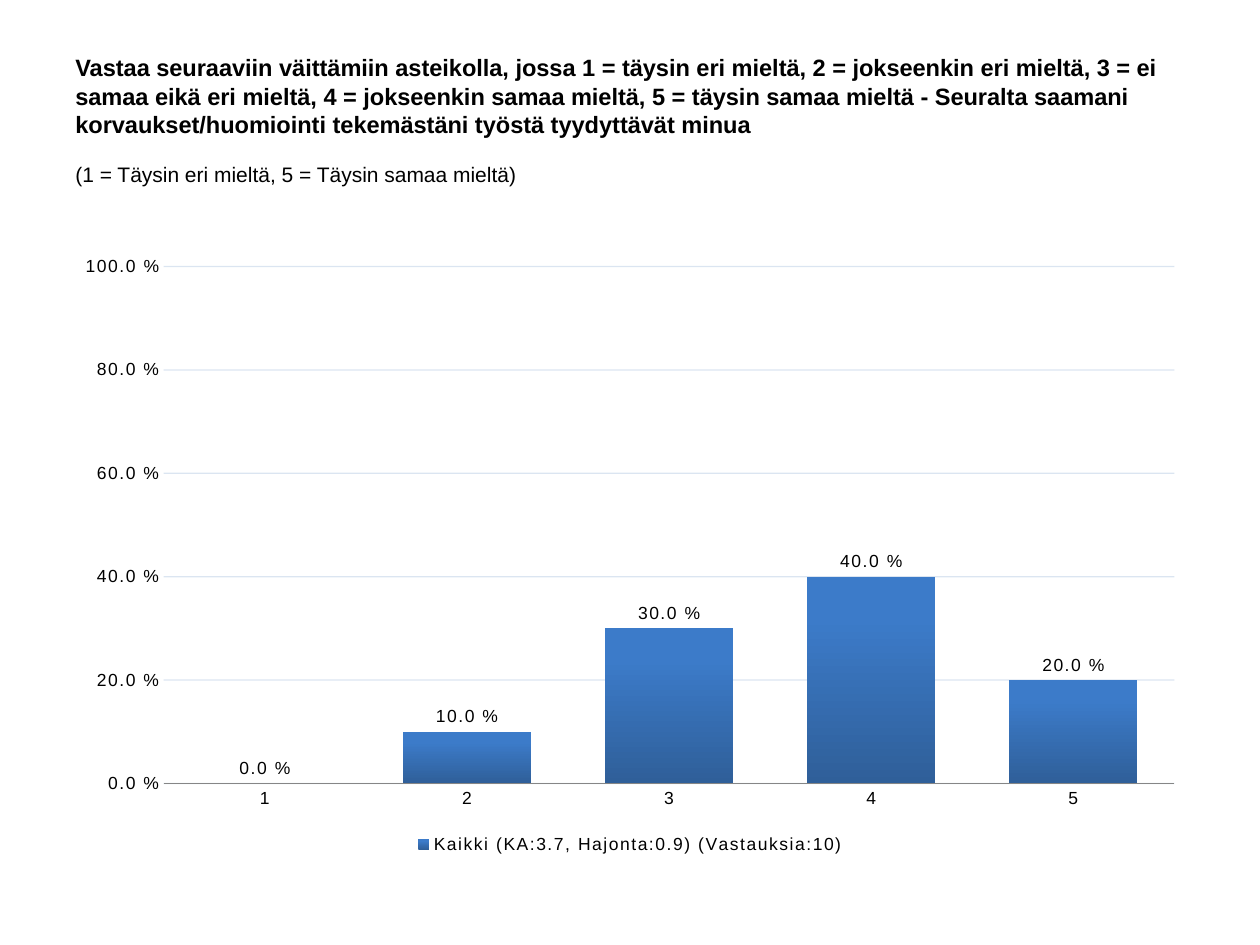
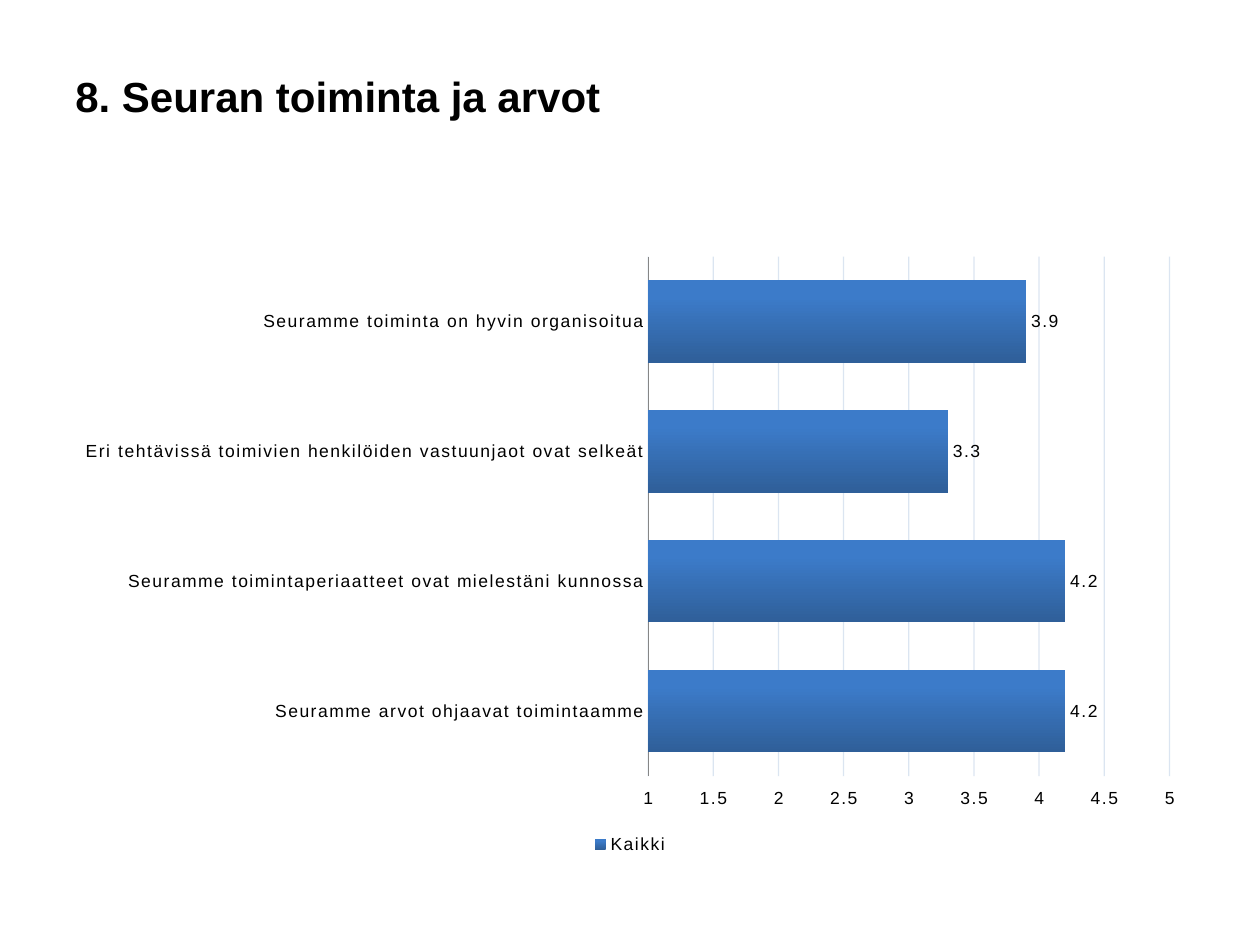
"""Build two survey result slides, each with a heading and a bar chart."""
from dataclasses import dataclass

from lxml import etree
from pptx import Presentation
from pptx.chart.data import CategoryChartData
from pptx.dml.color import RGBColor
from pptx.enum.chart import (XL_CHART_TYPE, XL_LABEL_POSITION, XL_LEGEND_POSITION,
                             XL_TICK_LABEL_POSITION, XL_TICK_MARK)
from pptx.enum.text import MSO_ANCHOR
from pptx.oxml.ns import qn
from pptx.util import Emu, Pt

COLUMN = XL_CHART_TYPE.COLUMN_CLUSTERED
BAR = XL_CHART_TYPE.BAR_CLUSTERED
NO_TICK = XL_TICK_MARK.NONE
LEGEND_BOTTOM = XL_LEGEND_POSITION.BOTTOM
LABEL_OUTSIDE = XL_LABEL_POSITION.OUTSIDE_END
TICKS_HIGH = XL_TICK_LABEL_POSITION.HIGH
TOP, MIDDLE = MSO_ANCHOR.TOP, MSO_ANCHOR.MIDDLE

BLACK = RGBColor(0x00, 0x00, 0x00)
AXIS_GREY = RGBColor(0x86, 0x86, 0x86)
GRID_BLUE = RGBColor(0x4F, 0x81, 0xBD)
BAR_DARK = RGBColor(0x2F, 0x5F, 0x99)
BAR_LIGHT = RGBColor(0x3C, 0x7B, 0xC9)

FONT = "Arial"
PX = 9144
LEFT, WIDTH = 50, 900
PERCENT = "0.0\\ %"


@dataclass(frozen=True)
class Question:
    """One survey question with its answers and value scale."""
    title: str
    title_size: float
    note: str
    kind: XL_CHART_TYPE
    series: str
    answers: dict[str, float]
    low: float
    high: float
    step: float
    number_format: str


QUESTIONS = [
    Question(
        "Vastaa seuraaviin väittämiin asteikolla, jossa 1 = täysin eri mieltä, "
        "2 = jokseenkin eri mieltä, 3 = ei samaa eikä eri mieltä, "
        "4 = jokseenkin samaa mieltä, 5 = täysin samaa mieltä - Seuralta saamani "
        "korvaukset/huomiointi tekemästäni työstä tyydyttävät minua",
        13.5, "(1 = Täysin eri mieltä, 5 = Täysin samaa mieltä)", COLUMN,
        "Kaikki (KA:3.7, Hajonta:0.9) (Vastauksia:10)",
        {"1": 0, "2": 0.1, "3": 0.3, "4": 0.4, "5": 0.2},
        0, 1, 0.2, PERCENT),
    Question(
        "8. Seuran toiminta ja arvot", 24, "", BAR, "Kaikki",
        {"Seuramme toiminta on hyvin organisoitua": 3.9,
         "Eri tehtävissä toimivien henkilöiden vastuunjaot ovat selkeät": 3.3,
         "Seuramme toimintaperiaatteet ovat mielestäni kunnossa": 4.2,
         "Seuramme arvot ohjaavat toimintaamme": 4.2},
        1, 5, 0.5, "General"),
]


def box(top: int, height: int) -> tuple[Emu, Emu, Emu, Emu]:
    """Return the full-width area at the given top and height in px."""
    return Emu(LEFT * PX), Emu(top * PX), Emu(WIDTH * PX), Emu(height * PX)


def set_font(font, size: float, bold: bool = False) -> None:
    """Apply the shared black typeface."""
    font.name, font.size, font.bold = FONT, Pt(size), bold
    font.color.rgb = BLACK


def add_text(s, text: str, top: int, height: int, size: float,
             bold: bool = False, anchor: MSO_ANCHOR = TOP, before: float = 0) -> None:
    """Add a wrapped one-paragraph text box."""
    tf = s.shapes.add_textbox(*box(top, height)).text_frame
    tf.word_wrap = True
    tf.vertical_anchor = anchor
    p = tf.paragraphs[0]
    p.text = text
    p.space_before = Pt(before)
    set_font(p.font, size, bold)


def style_axes(chart, q: Question) -> None:
    """Set the scale, grid and lines of both axes."""
    cat, val = chart.category_axis, chart.value_axis
    for axis in (cat, val):
        axis.major_tick_mark = axis.minor_tick_mark = NO_TICK
    cat.format.line.color.rgb = AXIS_GREY
    cat.format.line.width = Pt(0.75)
    if q.kind == BAR:
        cat.reverse_order = True
        val.tick_label_position = TICKS_HIGH
    val.minimum_scale, val.maximum_scale, val.major_unit = q.low, q.high, q.step
    val.tick_labels.number_format = q.number_format
    val.tick_labels.number_format_is_linked = False
    val.format.line.fill.background()
    grid = val.major_gridlines.format.line
    grid.color.rgb = GRID_BLUE
    grid.width = Pt(0.75)
    for color in chart.element.xpath(".//c:majorGridlines//a:srgbClr"):
        etree.SubElement(color, qn("a:alpha")).set("val", "20000")


def style_bars(plot, q: Question) -> None:
    """Fill the bars with a gradient and label their values."""
    plot.gap_width = 58
    plot.vary_by_categories = False
    fill = plot.series[0].format.fill
    fill.gradient()
    fill.gradient_angle = 90
    for stop, color, position in zip(fill.gradient_stops, (BAR_DARK, BAR_LIGHT), (0, 0.8)):
        stop.color.rgb = color
        stop.position = position
    plot.has_data_labels = True
    labels = plot.data_labels
    labels.show_value = True
    labels.position = LABEL_OUTSIDE
    labels.number_format = q.number_format
    labels.number_format_is_linked = False


def add_survey_chart(s, q: Question) -> None:
    """Add the chart of answers with its legend."""
    data = CategoryChartData(number_format=q.number_format)
    data.categories = list(q.answers)
    data.add_series(q.series, list(q.answers.values()))
    chart = s.shapes.add_chart(q.kind, *box(194, 488), data).chart
    chart.has_title = False
    chart.has_legend = True
    chart.legend.position = LEGEND_BOTTOM
    chart.legend.include_in_layout = False
    plot = chart.plots[0]
    style_axes(chart, q)
    style_bars(plot, q)
    for part in (chart, chart.legend, plot.data_labels,
                 chart.category_axis.tick_labels, chart.value_axis.tick_labels):
        set_font(part.font, 10)
    for props in chart.element.xpath(".//a:defRPr"):
        props.set("spc", "100")


def main() -> None:
    """Build and save the presentation."""
    prs = Presentation()
    prs.slide_width, prs.slide_height = Emu(1000 * PX), Emu(750 * PX)
    for q in QUESTIONS:
        s = prs.slides.add_slide(prs.slide_layouts[6])
        add_text(s, q.title, 36, 80, q.title_size, bold=True, anchor=MIDDLE)
        if q.note:
            add_text(s, q.note, 123, 59, 12, before=2.4)
        add_survey_chart(s, q)
    prs.save("out.pptx")


if __name__ == "__main__":
    main()
